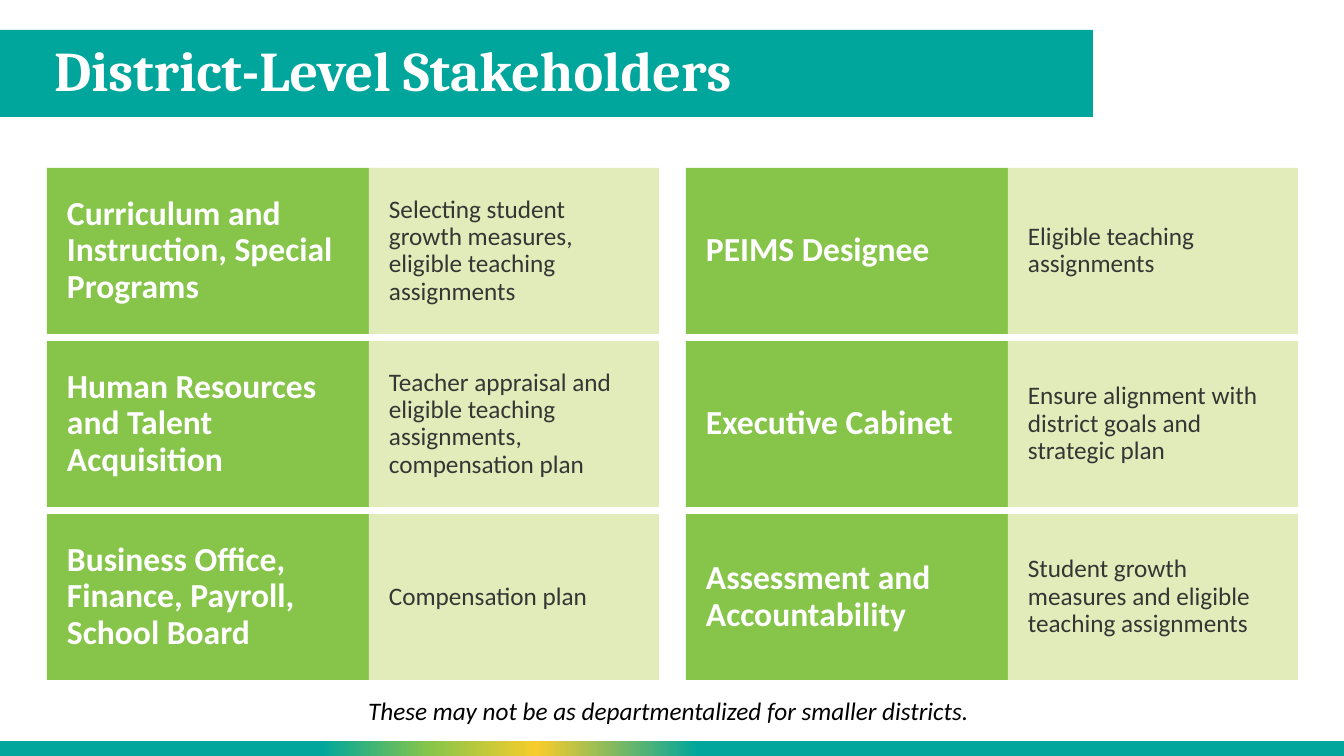
from dataclasses import dataclass

from lxml import etree
from pptx import Presentation
from pptx import util as u
from pptx.dml.color import RGBColor
from pptx.enum import shapes, text
from pptx.oxml.ns import qn

EMU_PER_PX = 914400 / 100.8


def px(length):
    return u.Emu(round(length * EMU_PER_PX))


@dataclass(frozen=True)
class Theme:
    teal: str = "00A69B"
    green: str = "87C54A"
    pale_green: str = "E1ECBA"
    yellow: str = "F8CC2B"
    white: str = "FFFFFF"
    charcoal: str = "363534"
    black: str = "000000"
    heading_font: str = "Cambria"
    body_font: str = "Calibri"
    title_size: int = 40
    role_size: int = 24
    detail_size: int = 18


class StakeholderSlide:
    def __init__(self, theme, slide):
        self.theme = theme
        self.slide = slide

    def rectangle(self, box, color):
        rect = self.slide.shapes.add_shape(
            shapes.MSO_SHAPE.RECTANGLE, *map(px, box))
        rect.shadow.inherit = False
        rect.line.fill.background()
        self.fill(rect, color)
        return rect

    def fill(self, shape, color):
        shape.fill.solid()
        shape.fill.fore_color.rgb = RGBColor.from_string(color)

    def place(self, shape, box):
        for side, length in zip(("left", "top", "width", "height"), box):
            setattr(shape, side, px(length))

    def send_to_back(self, shape):
        self.slide.shapes.element.insert(2, shape.element)

    def set_wording(self, shape, wording, color, font, inset=10, spacing=0.9,
                    align=text.PP_ALIGN.LEFT):
        frame = shape.text_frame
        frame.text = wording
        paragraph = frame.paragraphs[0]
        formats = (
            (frame, dict(word_wrap=True, auto_size=text.MSO_AUTO_SIZE.NONE,
                         vertical_anchor=text.MSO_ANCHOR.MIDDLE,
                         margin_left=px(inset), margin_right=px(inset),
                         margin_top=px(5), margin_bottom=px(5))),
            (paragraph, dict(alignment=align, line_spacing=spacing,
                             space_before=u.Pt(0))),
            (paragraph.runs[0].font, {**font, "size": u.Pt(font["size"])}),
        )
        for target, values in formats:
            for name, value in values.items():
                setattr(target, name, value)
        paragraph.runs[0].font.color.rgb = RGBColor.from_string(color)

    def title(self, wording, box):
        heading = self.slide.shapes.title
        self.place(heading, box)
        self.set_wording(heading, wording, self.theme.white,
                         dict(name=self.theme.heading_font,
                              size=self.theme.title_size, bold=True))

    def title_band(self, box):
        self.send_to_back(self.rectangle(box, self.theme.teal))

    def footer_band(self, box):
        band = self.rectangle(box, self.theme.teal)
        band.fill.gradient()
        band.fill.gradient_angle = 180
        stops = band.element.spPr.find(qn("a:gradFill")).find(qn("a:gsLst"))
        for stop in list(stops):
            stops.remove(stop)
        t = self.theme
        for percent, color in ((0, t.teal), (48, t.teal), (60, t.yellow),
                               (68, t.green), (76, t.teal), (100, t.teal)):
            stop = etree.SubElement(stops, qn("a:gs"), pos=str(percent * 1000))
            etree.SubElement(stop, qn("a:srgbClr"), val=color)
        self.send_to_back(band)

    def role(self, wording, box, placeholder=None):
        """Draw a green role cell, in the placeholder if one is given."""
        if placeholder is None:
            cell = self.rectangle(box, self.theme.green)
        else:
            cell = placeholder
            self.place(cell, box)
            self.fill(cell, self.theme.green)
        self.set_wording(cell, wording, self.theme.white,
                         dict(name=self.theme.body_font,
                              size=self.theme.role_size, bold=True), inset=20)
        if placeholder is not None:
            properties = cell.text_frame.paragraphs[0]._p.get_or_add_pPr()
            properties.set("marL", "0")
            properties.set("indent", "0")
            etree.SubElement(properties, qn("a:buNone"))

    def detail(self, wording, box):
        cell = self.rectangle(box, self.theme.pale_green)
        self.set_wording(cell, wording, self.theme.charcoal,
                         dict(name=self.theme.body_font,
                              size=self.theme.detail_size), inset=20)

    def note(self, wording, box):
        caption = self.slide.shapes.add_textbox(*map(px, box))
        self.set_wording(caption, wording, self.theme.black,
                         dict(name=self.theme.body_font,
                              size=self.theme.detail_size, italic=True),
                         spacing=1.0, align=text.PP_ALIGN.CENTER)


STAKEHOLDER_COLUMNS = (
    (("Curriculum and Instruction, Special Programs",
      "Selecting student growth measures, eligible teaching assignments"),
     ("Human Resources and Talent Acquisition",
      "Teacher appraisal and eligible teaching assignments, "
      "compensation plan"),
     ("Business Office, Finance, Payroll, School Board",
      "Compensation plan")),
    (("PEIMS Designee", "Eligible teaching assignments"),
     ("Executive Cabinet",
      "Ensure alignment with district goals and strategic plan"),
     ("Assessment and Accountability",
      "Student growth measures and eligible teaching assignments")),
)
GRID_LEFT, GRID_TOP = 47, 168
COLUMN_PITCH, ROW_PITCH = 639, 173
ROLE_WIDTH, DETAIL_WIDTH, CELL_HEIGHT = 322, 290, 166


def main():
    deck = Presentation()
    deck.slide_width, deck.slide_height = px(1344), px(756)
    slide = deck.slides.add_slide(deck.slide_layouts[1])
    page = StakeholderSlide(Theme(), slide)

    page.footer_band((-1, 741, 1345, 15))
    page.title_band((-1, 30, 1094, 87))
    page.title("District-Level Stakeholders", (44, 30, 1014, 87))

    body = slide.placeholders[1]
    for column, stakeholders in enumerate(STAKEHOLDER_COLUMNS):
        left = GRID_LEFT + column * COLUMN_PITCH
        for row, (role, detail) in enumerate(stakeholders):
            top = GRID_TOP + row * ROW_PITCH
            page.role(role, (left, top, ROLE_WIDTH, CELL_HEIGHT), body)
            page.detail(detail, (left + ROLE_WIDTH, top,
                                 DETAIL_WIDTH, CELL_HEIGHT))
            body = None

    page.note("These may not be as departmentalized for smaller districts.",
              (39, 688, 1259, 44))
    deck.save("out.pptx")


if __name__ == "__main__":
    main()
